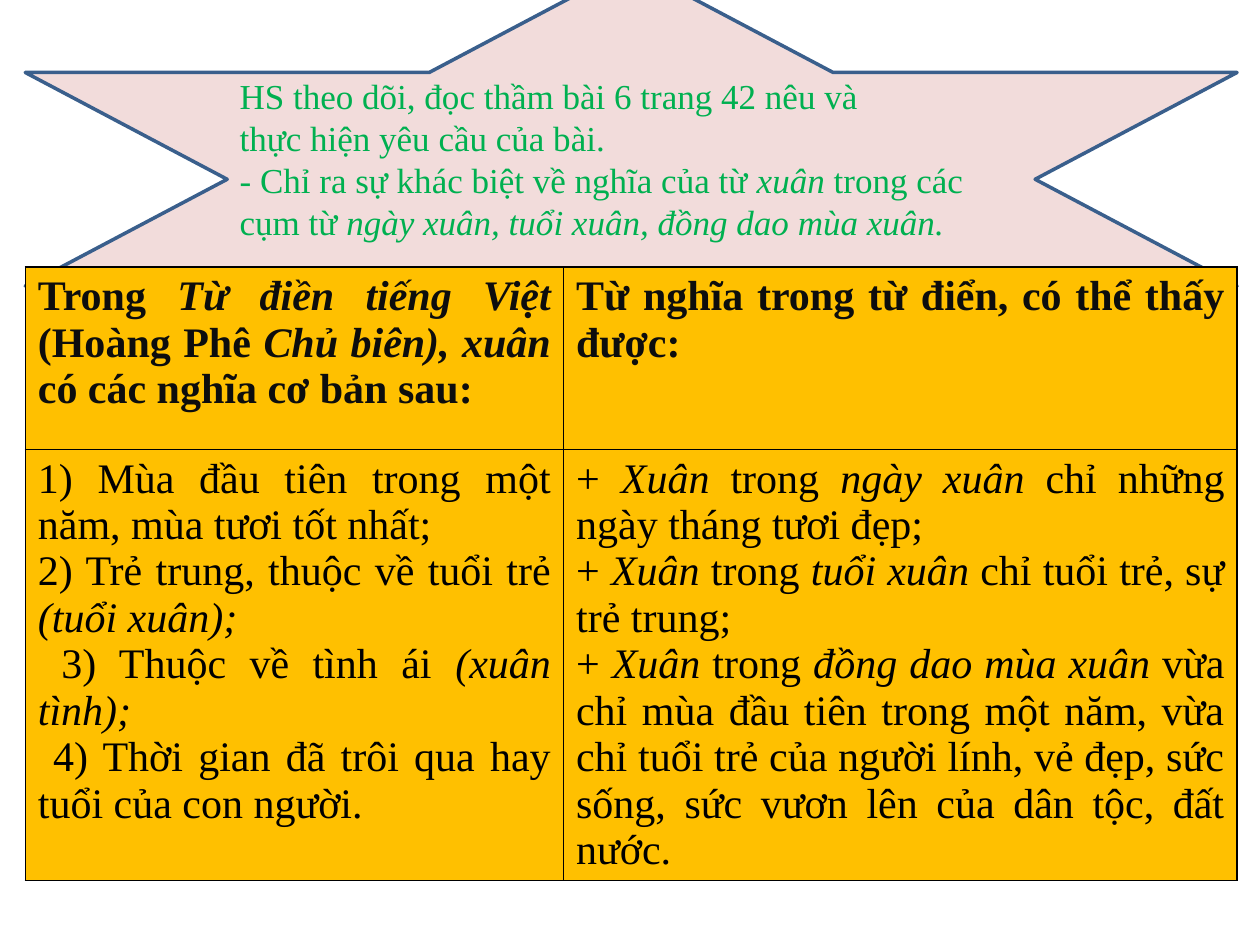
from itertools import product

from lxml import etree
from pptx import Presentation
from pptx.dml.color import RGBColor
from pptx.enum.shapes import MSO_SHAPE as Preset
from pptx.enum.text import MSO_ANCHOR as Anchor, PP_ALIGN as Align
from pptx.oxml.ns import qn
from pptx.util import Cm, Pt

COLORS = {
    "star": "F2DCDB", "outline": "3A5F8C", "task": "00B050",
    "cell": "FFC000", "heading": "0D0D0D", "body": "000000", "border": "000000",
}
FONT = "Times New Roman"
FORMATS = {
    "task": {"size": Pt(20), "name": FONT, "bold": False},
    "heading": {"size": Pt(24), "name": FONT, "bold": True},
    "body": {"size": Pt(24), "name": FONT, "bold": False},
}
TASK = [
    "HS theo dõi, đọc thầm bài 6 trang 42 nêu và",
    "thực hiện yêu cầu của bài.",
    "- Chỉ ra sự khác biệt về nghĩa của từ *xuân *trong các cụm từ "
    "*ngày xuân, tuổi xuân, đồng dao mùa xuân.*",
]
MEANINGS = [
    [
        ["Trong *Từ điền tiếng Việt* (Hoàng Phê *Chủ biên), xuân* "
         "có các nghĩa cơ bản sau:"],
        ["Từ nghĩa trong từ điển, có thể thấy được:"],
    ],
    [
        [
            "1) Mùa đầu tiên trong một năm, mùa tươi tốt nhất;",
            "2) Trẻ trung, thuộc về tuổi trẻ *(tuổi xuân);*",
            " 3) Thuộc về tình ái *(xuân tình);*",
            " 4) Thời gian đã trôi qua hay tuổi của con người.",
        ],
        [
            "+ *Xuân* trong *ngày xuân* chỉ những ngày tháng tươi đẹp;",
            "+ *Xuân* trong *tuổi xuân* chỉ tuổi trẻ, sự trẻ trung;",
            "+ *Xuân* trong *đồng dao mùa xuân* vừa chỉ mùa đầu tiên trong một năm, "
            "vừa chỉ tuổi trẻ của người lính, vẻ đẹp, sức sống, sức vươn lên "
            "của dân tộc, đất nước.",
        ],
    ],
]


def set_attributes(target, values):
    for name, value in values.items():
        setattr(target, name, value)


def color(key):
    return RGBColor.from_string(COLORS[key])


def fill_solid(fill, key):
    fill.solid()
    fill.fore_color.rgb = color(key)


def write_text(frame, lines, style, align):
    for index, line in enumerate(lines):
        paragraph = frame.paragraphs[0] if index == 0 else frame.add_paragraph()
        paragraph.alignment = align
        for position, text in enumerate(line.split("*")):
            if text:
                run = paragraph.add_run()
                run.text = text
                set_attributes(run.font, {**FORMATS[style], "italic": position % 2 == 1})
                run.font.color.rgb = color(style)


def add_star(slide):
    star = slide.shapes.add_shape(
        Preset.STAR_6_POINT, Cm(0.51), Cm(-0.69), Cm(24.43), Cm(8.61))
    star.shadow.inherit = False
    fill_solid(star.fill, "star")
    star.line.color.rgb = color("outline")
    star.line.width = Pt(2)
    set_attributes(star.text_frame, {
        "word_wrap": True, "vertical_anchor": Anchor.MIDDLE, "margin_bottom": Cm(0.98)})
    write_text(star.text_frame, TASK, "task", Align.LEFT)


def add_borders(cell):
    properties = cell._tc.get_or_add_tcPr()
    for index, side in enumerate(("lnL", "lnR", "lnT", "lnB")):
        line = etree.Element(qn(f"a:{side}"), w=str(Pt(1)))
        fill = etree.SubElement(line, qn("a:solidFill"))
        etree.SubElement(fill, qn("a:srgbClr"), val=COLORS["border"])
        properties.insert(index, line)


def add_meanings_table(slide):
    widths, heights = (Cm(10.85), Cm(13.58)), (Cm(3.68), Cm(8.69))
    table = slide.shapes.add_table(
        2, 2, Cm(0.51), Cm(5.38), sum(widths), sum(heights)).table
    for column, width in zip(table.columns, widths):
        column.width = width
    for row, height in zip(table.rows, heights):
        row.height = height
    for row, column in product(range(2), repeat=2):
        cell = table.cell(row, column)
        fill_solid(cell.fill, "cell")
        add_borders(cell)
        style = "heading" if row == 0 else "body"
        write_text(cell.text_frame, MEANINGS[row][column], style, Align.JUSTIFY)


def main():
    presentation = Presentation()
    set_attributes(presentation, {"slide_width": Cm(25.4), "slide_height": Cm(19.05)})
    slide = presentation.slides.add_slide(presentation.slide_layouts[6])
    add_star(slide)
    add_meanings_table(slide)
    presentation.save("out.pptx")


main()
